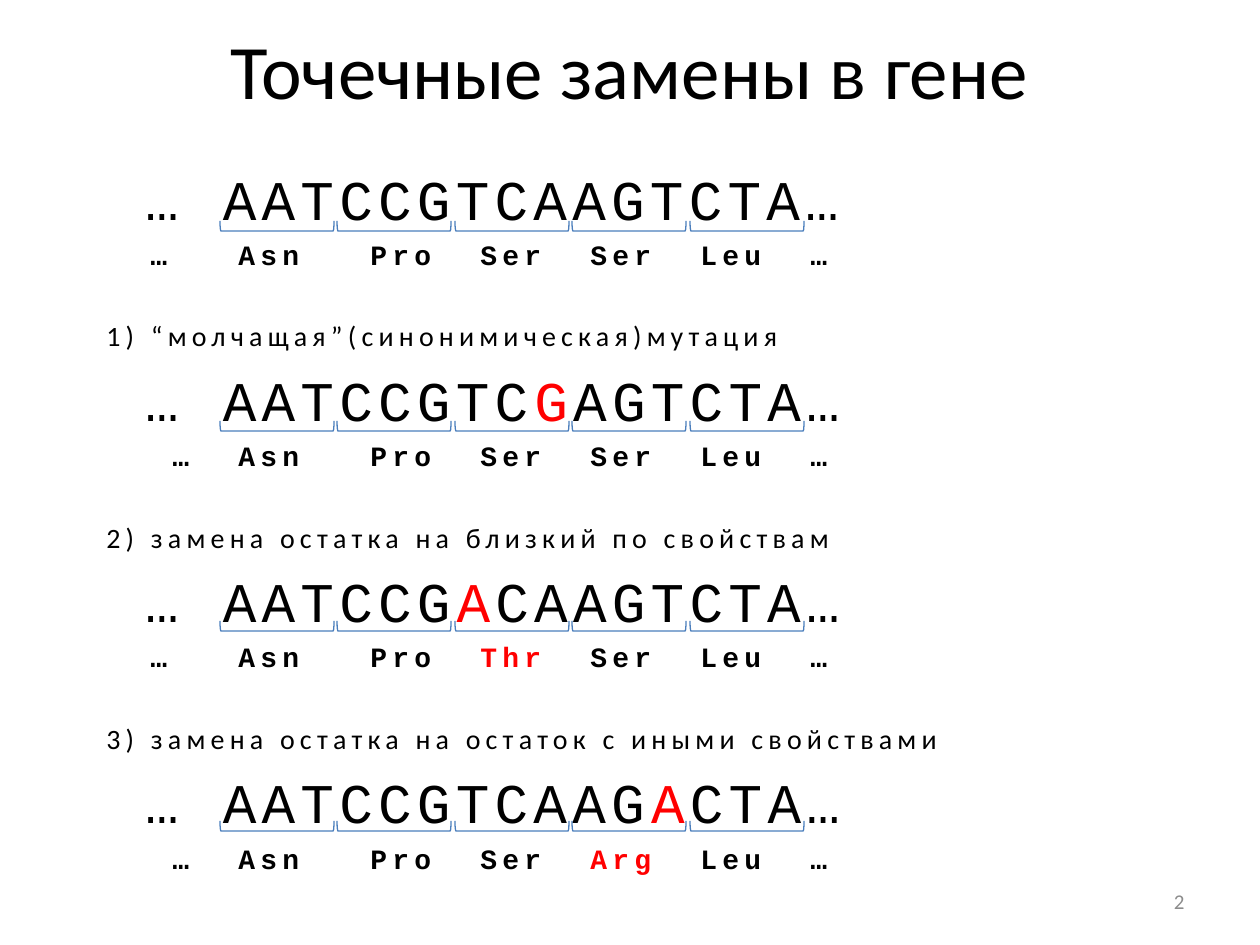
from dataclasses import dataclass

from lxml.etree import SubElement
from pptx import Presentation
from pptx.dml.color import RGBColor
from pptx.enum.shapes import MSO_SHAPE as Shape
from pptx.enum.text import MSO_ANCHOR as Anchor, PP_ALIGN as Align
from pptx.oxml.ns import qn
from pptx.util import Emu, Pt

EMU_PER_PX = 914400 / 126


def px(length):
    return Emu(round(length * EMU_PER_PX))


@dataclass(frozen=True)
class Theme:
    ink: RGBColor = RGBColor(0, 0, 0)
    mutation: RGBColor = RGBColor(0xFF, 0, 0)
    bracket: RGBColor = RGBColor(0x4B, 0x7E, 0xBC)
    muted: RGBColor = RGBColor(0x8C, 0x8C, 0x8C)
    sans: str = "Calibri"
    mono: str = "Courier New"
    title_size: int = 44
    gene_size: int = 32
    body_size: int = 16
    number_size: int = 12
    tracking: int = 300  # hundredths of a point


class SlideBuilder:
    def __init__(self, deck, theme):
        self.theme = theme
        self.page = deck.slides.add_slide(deck.slide_layouts[5])

    def style(self, span, size, font, color):
        span.font.size = Pt(size)
        span.font.name = font
        span.font.color.rgb = color

    def title(self, text, left, top, width, height):
        box = self.page.shapes.title
        box.left, box.top, box.width, box.height = map(px, (left, top, width, height))
        box.text_frame.text = text
        box.text_frame.vertical_anchor = Anchor.MIDDLE
        para = box.text_frame.paragraphs[0]
        para.alignment = Align.CENTER
        self.style(para.runs[0], self.theme.title_size, self.theme.sans, self.theme.ink)

    def text_box(self, left, top, width, height):
        box = self.page.shapes.add_textbox(*map(px, (left, top, width, height)))
        box.text_frame.word_wrap = True
        return box.text_frame

    def line(self, frame, text, size, font, before, bold=False):
        """Add a tracked paragraph; parts between asterisks are mutations."""
        para = frame.paragraphs[0]
        if para.runs:
            para = frame.add_paragraph()
        para.space_before = Pt(before)
        for index, part in enumerate(text.split("*")):
            span = para.add_run()
            span.text = part
            color = self.theme.mutation if index % 2 else self.theme.ink
            self.style(span, size, font, color)
            span.font.bold = bold
            span._r.get_or_add_rPr().set("spc", str(self.theme.tracking))
        return para

    def heading(self, frame, text):
        self.line(frame, text, self.theme.body_size, self.theme.sans, 27.3)

    def gene(self, frame, codons):
        self.line(frame, f" … {codons}…", self.theme.gene_size, self.theme.mono, 7.25)

    def residues(self, frame, names, stops):
        """Add a row of residue names, each at its own tab stop."""
        text = "".join(f"\t{name}" for name in ("…", *names.split(), "…"))
        para = self.line(frame, text, self.theme.body_size, self.theme.mono, 3.6, True)
        tabs = SubElement(para._p.get_or_add_pPr(), qn("a:tabLst"))
        for stop in stops:
            SubElement(tabs, qn("a:tab"), pos=str(px(stop)), algn="l")

    def bracket(self, left, top, width, height):
        """Add a bracket that opens upwards, made by a quarter turn."""
        shape = self.page.shapes.add_shape(
            Shape.RIGHT_BRACKET, px(left + (width - height) / 2),
            px(top + (height - width) / 2), px(height), px(width))
        shape.rotation = 90
        shape.shadow.inherit = False
        shape.fill.background()
        shape.line.color.rgb = self.theme.bracket
        shape.line.width = Pt(0.75)

    def number(self, text, left, top, width, height):
        frame = self.text_box(left, top, width, height)
        frame.text = text
        frame.vertical_anchor = Anchor.MIDDLE
        para = frame.paragraphs[0]
        para.alignment = Align.RIGHT
        self.style(para.runs[0], self.theme.number_size, self.theme.sans, self.theme.muted)


# heading, gene, residues, character column of the leading ellipsis
VARIANTS = [
    (None, "AATCCGTCAAGTCTA", "Asn Pro Ser Ser Leu", 2),
    ("1) “молчащая”(синонимическая)мутация",
     "AATCCGTC*G*AGTCTA", "Asn Pro Ser Ser Leu", 3),
    ("2) замена остатка на близкий по свойствам",
     "AATCCG*A*CAAGTCTA", "Asn Pro *Thr* Ser Leu", 2),
    ("3) замена остатка на остаток с иными свойствами",
     "AATCCGTCAAG*A*CTA", "Asn Pro Ser *Arg* Leu", 3),
]
RESIDUE_COLUMNS = (6, 12, 17, 22, 27, 32)
CHARACTER = 22
CODONS = 5


def main():
    deck = Presentation()
    deck.slide_width, deck.slide_height = px(1260), px(945)
    builder = SlideBuilder(deck, Theme())
    builder.title("Точечные замены в гене", 63, -10, 1134, 158)
    frame = builder.text_box(94, 158, 1134, 766)
    for row, (heading, codons, names, start) in enumerate(VARIANTS):
        if heading:
            builder.heading(frame, heading)
        builder.gene(frame, codons)
        stops = [column * CHARACTER for column in (start, *RESIDUE_COLUMNS)]
        builder.residues(frame, names, stops)
        for codon in range(CODONS):
            builder.bracket(220 + codon * 235 // 2, 221 + row * 200, 114, 10)
    builder.number("2", 903, 876, 294, 50)
    deck.save("out.pptx")


if __name__ == "__main__":
    main()
